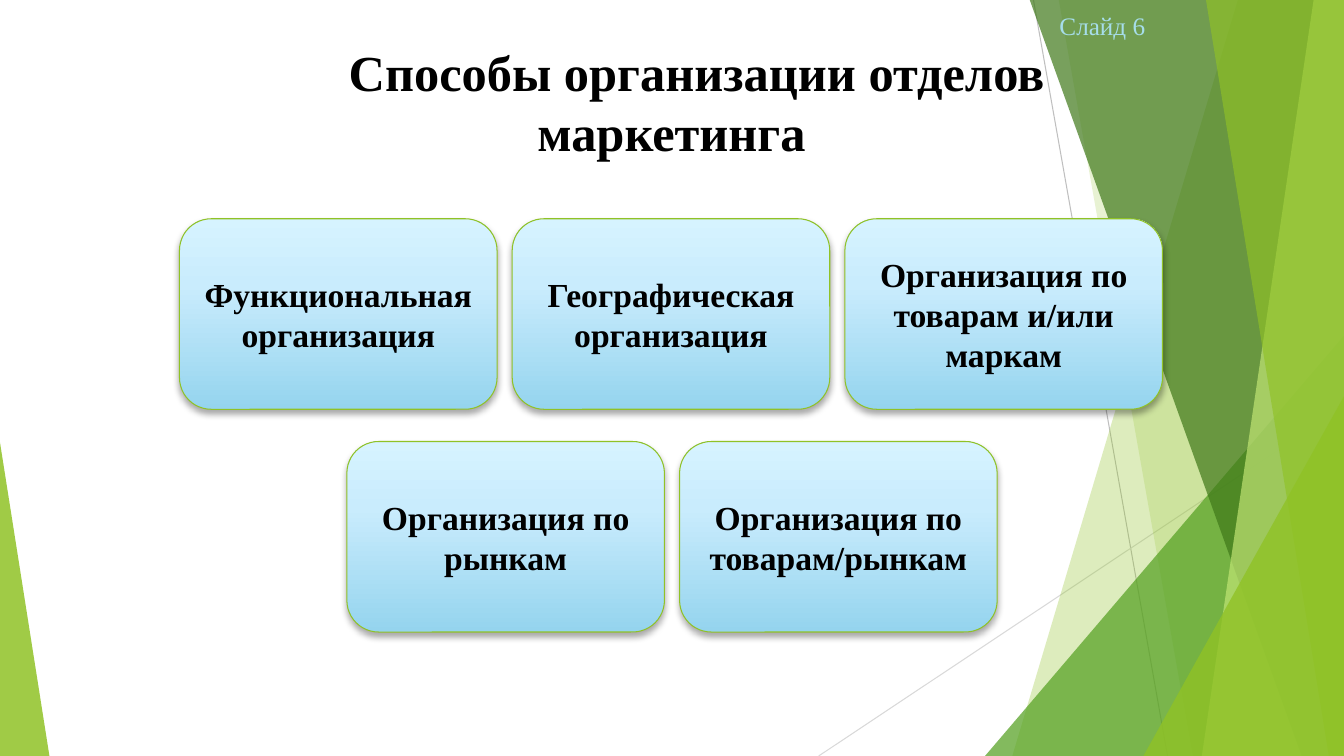
import copy
from dataclasses import dataclass

import lxml.etree
import pptx
import pptx.dml.color
import pptx.enum.dml
import pptx.enum.shapes
import pptx.enum.text
import pptx.oxml.ns
import pptx.util

Inches = pptx.util.Inches
SHAPES = pptx.enum.shapes.MSO_SHAPE
CENTER = pptx.enum.text.PP_ALIGN.CENTER
MIDDLE = pptx.enum.text.MSO_ANCHOR.MIDDLE

WIDTH, HEIGHT = 13.33, 7.5
BAND_TOP = -0.01
FONT = "Times New Roman"
COLORS = {
    "text": "000000",
    "label": "A6DDEA",
    "lime": "90C226",
    "pale": "C0E474",
    "green": "54A021",
    "dark": "3F7819",
    "ray": "BFBFBF",
    "light_ray": "D9D9D9",
    "card_bottom": "95D4EE",
    "card_middle": "C9ECFD",
    "card_top": "D6F3FF",
}
CARD_STOPS = ((0, "card_bottom"), (0.65, "card_middle"), (1, "card_top"))
CARD_WIDTH, CARD_HEIGHT, CARD_PITCH = 3.15, 1.89, 3.3


@dataclass
class Ray:
    x1: float
    y1: float
    x2: float
    y2: float
    color: str


@dataclass
class Band:
    """Full-height facet between a slanted left edge and the right slide edge."""
    top_x: float
    bottom_x: float
    color: str
    alpha: int


@dataclass
class Corner:
    """Triangle standing on the bottom edge, with its apex at one side."""
    left: float
    top: float
    width: float
    apex: float
    color: str
    alpha: int


@dataclass
class CardRow:
    left: float
    top: float
    labels: tuple[str, ...]


RAYS = (
    Ray(10.25, 0, 11.58, HEIGHT, "ray"),
    Ray(WIDTH, 4.03, 8.12, HEIGHT, "light_ray"),
)
FACETS = (
    Band(12.28, 10.04, "lime", 30),
    Band(10.5, 11.83, "lime", 20),
    Corner(9.77, 3.33, 3.56, 1, "green", 72),
    Band(10.21, 12.91, "dark", 70),
    Band(13.03, 11.92, "pale", 70),
    Band(11.96, 13.18, "lime", 65),
    Corner(11.34, 3.93, 1.99, 1, "lime", 80),
    Corner(0, 4.39, 0.49, 0, "lime", 85),
)
CARD_ROWS = (
    CardRow(1.78, 2.17, (
        "Функциональная организация",
        "Географическая организация",
        "Организация по товарам и/или маркам",
    )),
    CardRow(3.44, 4.38, (
        "Организация по рынкам",
        "Организация по товарам/рынкам",
    )),
)


def rgb(name: str) -> pptx.dml.color.RGBColor:
    return pptx.dml.color.RGBColor.from_string(COLORS[name])


def add_xml(parent, tag: str, **attrs):
    return lxml.etree.SubElement(parent, pptx.oxml.ns.qn(tag), attrs)


def add_ray(s, ray: Ray) -> None:
    ends = (Inches(v) for v in (ray.x1, ray.y1, ray.x2, ray.y2))
    line = s.shapes.add_connector(pptx.enum.shapes.MSO_CONNECTOR.STRAIGHT, *ends)
    line.line.color.rgb = rgb(ray.color)
    line.line.width = pptx.util.Pt(0.75)
    add_xml(line._element.spPr, "a:effectLst")


def add_facet(s, facet: Band | Corner) -> None:
    if isinstance(facet, Band):
        points = [(facet.top_x, BAND_TOP), (WIDTH, BAND_TOP),
                  (WIDTH, HEIGHT), (facet.bottom_x, HEIGHT)]
        start, *rest = [(Inches(x), Inches(y)) for x, y in points]
        builder = s.shapes.build_freeform(*start)
        builder.add_line_segments(rest)
        sp = builder.convert_to_shape()
    else:
        sp = s.shapes.add_shape(
            SHAPES.ISOSCELES_TRIANGLE, Inches(facet.left), Inches(facet.top),
            Inches(facet.width), Inches(HEIGHT - facet.top))
        sp.adjustments[0] = facet.apex
    sp.shadow.inherit = False
    sp.line.fill.background()
    sp.fill.solid()
    sp.fill.fore_color.rgb = rgb(facet.color)
    color = sp._element.spPr.find(".//" + pptx.oxml.ns.qn("a:srgbClr"))
    add_xml(color, "a:alpha", val=str(facet.alpha * 1000))


def set_text(sp, text: str, size: int, color: str = "text", bold: bool = False,
             align=None, anchor=None):
    tf = sp.text_frame
    frame_format = {"word_wrap": True, "vertical_anchor": anchor}
    for name, value in frame_format.items():
        setattr(tf, name, value)
    p = tf.paragraphs[0]
    p.alignment = align
    r = p.add_run()
    r.text = text
    font_format = {"name": FONT, "size": pptx.util.Pt(size), "bold": bold}
    for name, value in font_format.items():
        setattr(r.font, name, value)
    r.font.color.rgb = rgb(color)
    return p


def add_text(s, left: float, top: float, width: float, height: float,
             text: str, size: int, **text_format):
    box = s.shapes.add_textbox(*(Inches(v) for v in (left, top, width, height)))
    return set_text(box, text, size, **text_format)


def fill_card(sp) -> None:
    """Three-stop gradient that runs from the bottom up."""
    sp.fill.gradient()
    sp.fill.gradient_angle = 90
    stops = sp.fill.gradient_stops
    first = stops[0]._gs
    first.addnext(copy.deepcopy(first))
    for stop, (position, color) in zip(sp.fill.gradient_stops, CARD_STOPS):
        stop.position = position
        stop.color.rgb = rgb(color)


def add_card(s, left: float, top: float, label: str) -> None:
    sp = s.shapes.add_shape(
        SHAPES.ROUNDED_RECTANGLE, Inches(left), Inches(top),
        Inches(CARD_WIDTH), Inches(CARD_HEIGHT))
    fill_card(sp)
    sp.line.color.rgb = rgb("lime")
    sp.line.width = pptx.util.Pt(0.75)
    sp.shadow.inherit = False
    effects = sp._element.spPr.find(pptx.oxml.ns.qn("a:effectLst"))
    shadow = add_xml(effects, "a:outerShdw", blurRad=str(pptx.util.Pt(5)),
                     dist=str(pptx.util.Pt(3)), dir="5400000", rotWithShape="0")
    color = add_xml(shadow, "a:srgbClr", val=COLORS["text"])
    add_xml(color, "a:alpha", val="35000")
    set_text(sp, label, 24, bold=True, align=CENTER, anchor=MIDDLE)


def main() -> None:
    prs = pptx.Presentation()
    prs.slide_width, prs.slide_height = Inches(WIDTH), Inches(HEIGHT)
    s = prs.slides.add_slide(prs.slide_layouts[6])
    for ray in RAYS:
        add_ray(s, ray)
    for facet in FACETS:
        add_facet(s, facet)
    title = add_text(s, 1.79, -0.02, 9.74, 2.05,
                     "Способы организации отделов маркетинга", 36,
                     bold=True, align=CENTER, anchor=MIDDLE)
    title._p.get_or_add_pPr().set("indent", str(Inches(0.5)))
    add_text(s, 10.41, 0.05, 1.06, 0.4, "Слайд 6", 18, color="label")
    for row in CARD_ROWS:
        for i, label in enumerate(row.labels):
            add_card(s, row.left + i * CARD_PITCH, row.top, label)
    prs.save("out.pptx")


if __name__ == "__main__":
    main()
